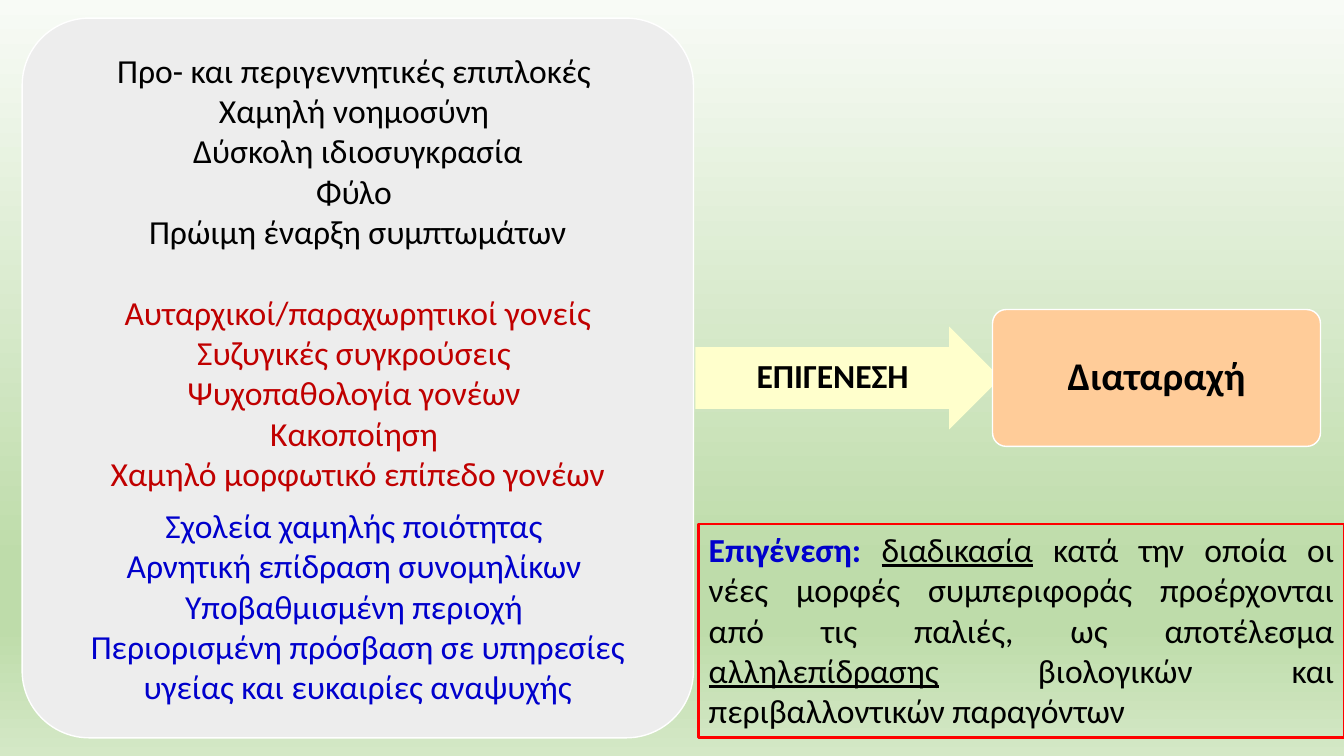
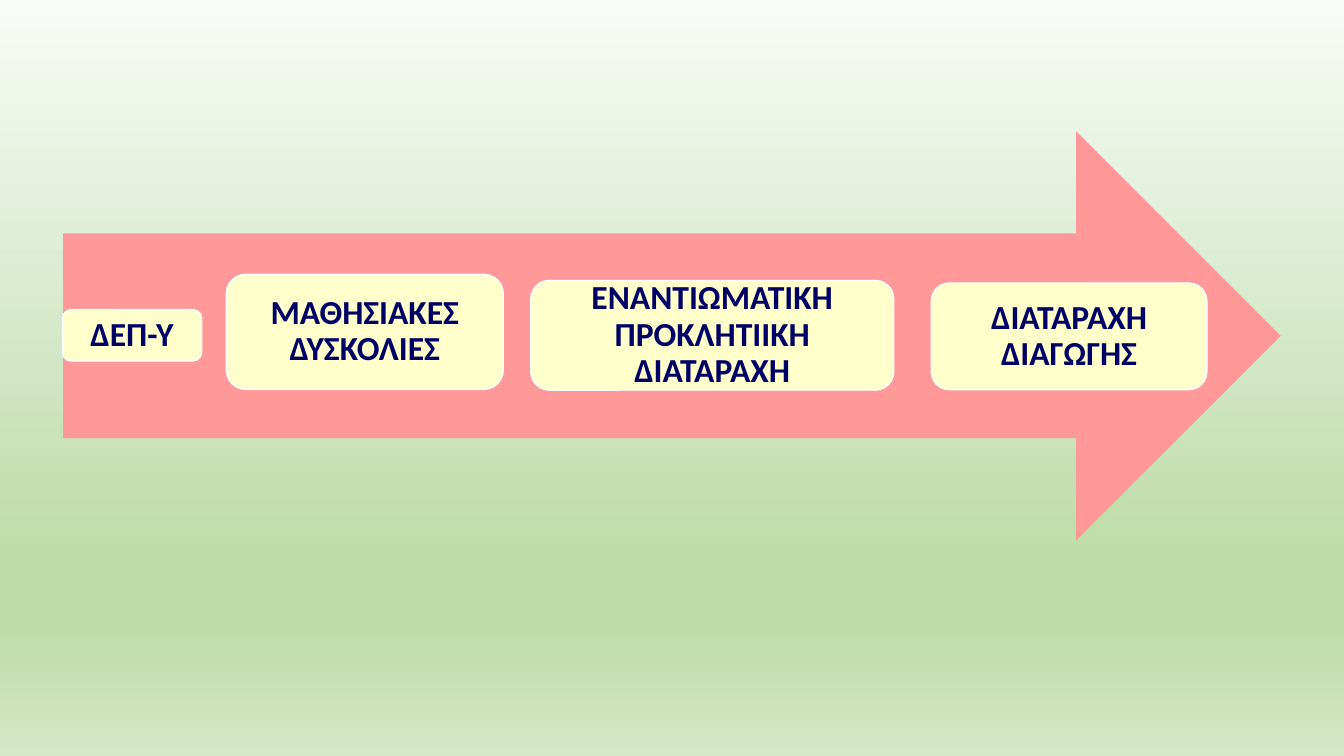
import copy
from dataclasses import dataclass

import pptx
import pptx.dml.color
import pptx.enum.shapes
import pptx.enum.text
import pptx.oxml.ns
import pptx.util

SHAPE = pptx.enum.shapes.MSO_SHAPE
ALIGN = pptx.enum.text.PP_ALIGN
ANCHOR = pptx.enum.text.MSO_ANCHOR
SLIDE_WIDTH = pptx.util.Inches(13.333)
SLIDE_HEIGHT = pptx.util.Inches(7.5)


@dataclass(frozen=True)
class Theme:
    """Colours, type sizes and spacing shared by the slides."""

    font: str = "Calibri"
    body: int = 24
    heading: int = 28
    line_height: float = 28.8
    group_gap: float = 8.4
    padding: float = 0.1
    tight: float = 0.9
    black: str = "000000"
    white: str = "FFFFFF"
    grey: str = "EDEDED"
    cream: str = "FFFFCC"
    peach: str = "FFCC99"
    pink: str = "FF9999"
    red: str = "FF0000"
    dark_red: str = "C00000"
    blue: str = "0000CC"
    navy: str = "000066"
    backdrop: tuple = ((0, "F8FBF6"), (74, "BEDCAA"), (83, "BEDCAA"), (100, "D4E8C6"))


THEME = Theme()

CHILD_FACTORS = (
    "Προ- και περιγεννητικές επιπλοκές ",
    "Χαμηλή νοημοσύνη ",
    "Δύσκολη ιδιοσυγκρασία",
    "Φύλο ",
    "Πρώιμη έναρξη συμπτωμάτων",
)
FAMILY_FACTORS = (
    "Αυταρχικοί/παραχωρητικοί γονείς",
    "Συζυγικές συγκρούσεις ",
    "Ψυχοπαθολογία γονέων ",
    "Κακοποίηση ",
    "Χαμηλό μορφωτικό επίπεδο γονέων",
)
SOCIAL_FACTORS = (
    "Σχολεία χαμηλής ποιότητας ",
    "Αρνητική επίδραση συνομηλίκων ",
    "Υποβαθμισμένη περιοχή ",
    "Περιορισμένη πρόσβαση σε υπηρεσίες υγείας και ευκαιρίες αναψυχής",
)
FACTOR_GROUPS = (
    (CHILD_FACTORS, THEME.black, 0),
    (FAMILY_FACTORS, THEME.dark_red, THEME.line_height),
    (SOCIAL_FACTORS, THEME.blue, THEME.group_gap),
)
STAGES = (
    ("ΔΕΠ-Υ", (4.65, 40.95, 10.35, 6.8)),
    ("ΜΑΘΗΣΙΑΚΕΣ ΔΥΣΚΟΛΙΕΣ", (16.85, 36.3, 20.6, 15.2)),
    ("ΕΝΑΝΤΙΩΜΑΤΙΚΗ ΠΡΟΚΛΗΤΙΙΚΗ ΔΙΑΤΑΡΑΧΗ", (39.5, 37.1, 27, 14.5)),
    ("ΔΙΑΤΑΡΑΧΗ ΔΙΑΓΩΓΗΣ", (69.3, 37.45, 20.5, 14.1)),
)


def rgb(code):
    """Turn a hex code into a colour."""
    return pptx.dml.color.RGBColor.from_string(code)


def paint_backdrop(deck):
    """Give the slide master the vertical green gradient."""
    master = deck.slide_master
    fill = master.background.fill
    fill.gradient()
    fill.gradient_angle = 270
    stops = next(master.element.iter(pptx.oxml.ns.qn("a:gsLst")))
    pattern = copy.deepcopy(stops[0])
    for stop in list(stops):
        stops.remove(stop)
    for _ in THEME.backdrop:
        stops.append(copy.deepcopy(pattern))
    for stop, (position, code) in zip(fill.gradient_stops, THEME.backdrop):
        stop.position = position / 100
        stop.color.rgb = rgb(code)


def add_page(deck):
    """Add a slide on the blank layout."""
    return deck.slides.add_slide(deck.slide_layouts[6])


def add_box(page, kind, area, fill=None, line=None, weight=1, adjust=()):
    """Add a preset shape; area is left, top, width, height in slide percent."""
    left, top, width, height = (
        round(share * full / 100)
        for share, full in zip(area, (SLIDE_WIDTH, SLIDE_HEIGHT) * 2)
    )
    box = page.shapes.add_shape(kind, left, top, width, height)
    box.shadow.inherit = False
    for index, value in enumerate(adjust):
        box.adjustments[index] = value
    if fill:
        box.fill.solid()
        box.fill.fore_color.rgb = rgb(fill)
    else:
        box.fill.background()
    if line:
        box.line.color.rgb = rgb(line)
        box.line.width = pptx.util.Pt(weight)
    else:
        box.line.fill.background()
    frame = box.text_frame
    frame.word_wrap = True
    frame.vertical_anchor = ANCHOR.MIDDLE
    frame.margin_left = frame.margin_right = pptx.util.Inches(THEME.padding)
    return box


def add_para(box, align=ALIGN.CENTER, before=0, spacing=1.0):
    """Return the next paragraph of a box, using its empty first one if free."""
    para = box.text_frame.paragraphs[0]
    if para.runs:
        para = box.text_frame.add_paragraph()
    para.alignment = align
    para.space_before = pptx.util.Pt(before)
    para.line_spacing = spacing
    return para


def add_span(para, text, color=THEME.black, size=THEME.body, bold=False, underline=False):
    """Add one formatted run to a paragraph."""
    span = para.add_run()
    span.text = text
    span.font.name = THEME.font
    span.font.size = pptx.util.Pt(size)
    span.font.color.rgb = rgb(color)
    span.font.bold = bold
    span.font.underline = underline


def add_label(box, text, color=THEME.black, size=THEME.body):
    """Write a bold centred label in a shape."""
    add_span(add_para(box, spacing=THEME.tight), text, color, size, bold=True)


def add_factors(page):
    """Add the panel that lists the risk factors in coloured groups."""
    panel = add_box(page, SHAPE.ROUNDED_RECTANGLE, (1.65, 2.4, 49.95, 95.2),
                    THEME.grey, THEME.white, adjust=(0.1,))
    for factors, color, gap in FACTOR_GROUPS:
        for index, factor in enumerate(factors):
            add_span(add_para(panel, before=0 if index else gap), factor, color)


def add_definition(page):
    """Add the framed definition of epigenesis."""
    box = add_box(page, SHAPE.RECTANGLE, (52, 69.3, 48, 28.3), line=THEME.red, weight=2)
    box.text_frame.vertical_anchor = ANCHOR.TOP
    para = add_para(box, ALIGN.JUSTIFY)
    add_span(para, "Επιγένεση: ", THEME.blue, bold=True)
    add_span(para, "διαδικασία", underline=True)
    add_span(para, " κατά την οποία οι νέες μορφές συμπεριφοράς προέρχονται "
                   "από τις παλιές, ως αποτέλεσμα ")
    add_span(para, "αλληλεπίδρασης", underline=True)
    add_span(para, " βιολογικών και περιβαλλοντικών παραγόντων")


def build_epigenesis(deck):
    """Build the slide that leads from risk factors to the disorder."""
    page = add_page(deck)
    add_factors(page)
    arrow = add_box(page, SHAPE.RIGHT_ARROW, (51.75, 43.2, 22.7, 13.6),
                    THEME.cream, adjust=(0.6, 0.5))
    add_label(arrow, "ΕΠΙΓΕΝΕΣΗ")
    disorder = add_box(page, SHAPE.ROUNDED_RECTANGLE, (73.85, 40.95, 24.4, 18.1),
                       THEME.peach, THEME.white, adjust=(0.1,))
    add_label(disorder, "Διαταραχή", size=THEME.heading)
    add_definition(page)


def build_progression(deck):
    """Build the slide that sets the stages along one arrow."""
    page = add_page(deck)
    add_box(page, SHAPE.RIGHT_ARROW, (4.7, 17.35, 90.6, 54.15), THEME.pink)
    for name, area in STAGES:
        stage = add_box(page, SHAPE.ROUNDED_RECTANGLE, area, THEME.cream, THEME.white)
        add_label(stage, name, THEME.navy)


def main():
    """Build and save the deck."""
    deck = pptx.Presentation()
    deck.slide_width = SLIDE_WIDTH
    deck.slide_height = SLIDE_HEIGHT
    paint_backdrop(deck)
    build_epigenesis(deck)
    build_progression(deck)
    deck.save("out.pptx")


if __name__ == "__main__":
    main()
